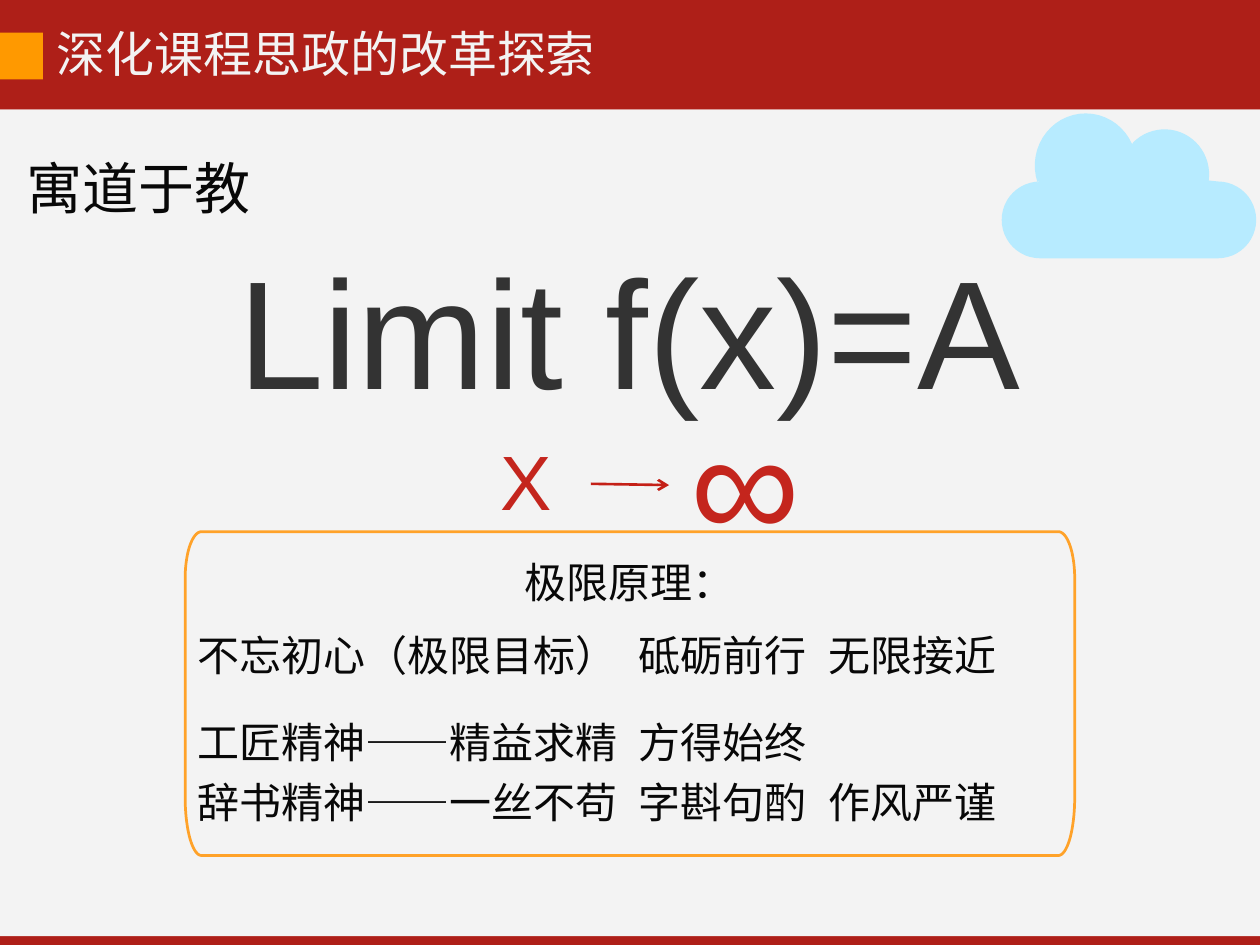
from math import cos, radians, sin

from lxml import etree
from pptx import Presentation, util as u
from pptx.dml.color import RGBColor
from pptx.enum import shapes, text
from pptx.oxml.ns import qn

COLUMNS, ROWS = 100, 75
CELL = u.Inches(0.1)
CJK, LATIN = "Noto Sans CJK SC", "Arial"
NO_STYLE_NO_GRID = "{2D5ABB26-0587-4C30-8999-92F81FD0307C}"
COLORS = {
    "bar": "AE1F18", "page": "F3F3F3", "marker": "FF9900", "ink": "080808",
    "formula": "333333", "limit": "C4251D", "arrow": "C42017",
    "frame": "FFA229", "cloud": "B7EBFF",
}
TABLE_ROWS = [
    ("不忘初心（极限目标）", "砥砺前行", "无限接近"),
    ("工匠精神——精益求精", "方得始终", ""),
    ("辞书精神——一丝不苟", "字斟句酌", "作风严谨"),
]


def grid(*counts):
    """Turn counts of grid cells into lengths."""
    return [u.Emu(round(count * CELL)) for count in counts]


def color(name):
    return RGBColor.from_string(COLORS[name])


def write(frame, words, size, ink="ink", font=CJK, indent=0.1, before=1,
          line=None, align=text.PP_ALIGN.LEFT, top=0.1):
    """Fill a text frame or table cell with one formatted paragraph."""
    frame.margin_left = frame.margin_right = frame.margin_bottom = 0
    frame.margin_top = grid(top)[0]
    paragraph = getattr(frame, "text_frame", frame).paragraphs[0]
    paragraph.alignment = align
    paragraph.space_before = u.Pt(before)
    if line:
        paragraph.line_spacing = u.Pt(line)
    paragraph._p.get_or_add_pPr().set("marL", str(grid(indent)[0]))
    run = paragraph.add_run()
    run.text = words
    run.font.size = u.Pt(size)
    run.font.name = font
    run.font.color.rgb = color(ink)
    east_asian = etree.SubElement(run._r.get_or_add_rPr(), qn("a:ea"))
    east_asian.set("typeface", font)


def add_label(slide, box, words, size, **style):
    frame = slide.shapes.add_textbox(*grid(*box)).text_frame
    frame.word_wrap = True
    write(frame, words, size, **style)


def add_block(slide, box, fill):
    shape = slide.shapes.add_shape(shapes.MSO_SHAPE.RECTANGLE, *grid(*box))
    shape.shadow.inherit = False
    shape.fill.solid()
    shape.fill.fore_color.rgb = color(fill)
    shape.line.fill.background()


def arc(x, y, radius_x, radius_y, start, end, steps=24):
    """Points along an ellipse, clockwise, with angles in degrees."""
    angles = [radians(start + (end - start) * i / steps)
              for i in range(steps + 1)]
    return [(x + radius_x * cos(a), y + radius_y * sin(a)) for a in angles]


def add_outline(slide, points):
    corners = [grid(*point) for point in points]
    builder = slide.shapes.build_freeform(*corners[0])
    builder.add_line_segments(corners[1:], close=True)
    shape = builder.convert_to_shape()
    shape.shadow.inherit = False
    return shape


def page(slide, header, footer):
    add_block(slide, (0, 0, COLUMNS, header), "bar")
    add_block(slide, (0, ROWS - footer, COLUMNS, footer), "bar")
    add_block(slide, (0, header, COLUMNS, ROWS - header - footer), "page")


def heading(slide, box):
    left, top, width, height = box
    add_block(slide, (left, top + 0.8, 3.4, 3.7), "marker")
    add_label(slide, (left + 4.4, top, width - 4.4, height),
              "深化课程思政的改革探索", 28, ink="page")


def formula(slide, box):
    left, top, width, _ = box
    add_label(slide, (left, top, width, 14.9), "Limit f(x)=A", 88,
              ink="formula", font=LATIN)
    add_label(slide, (left + 20.8, top + 15.7, 4.4, 7.6), "X", 44,
              ink="limit", font=LATIN)
    add_label(slide, (left + 35.9, top + 11.9, 9, 14.9), "∞", 88,
              ink="limit", font=LATIN)
    start = grid(left + 28.1, top + 19.8)
    end = grid(left + 34.3, top + 19.9)
    arrow = slide.shapes.add_connector(shapes.MSO_CONNECTOR.STRAIGHT,
                                       *start, *end)
    arrow.line.color.rgb = color("arrow")
    arrow.line.width = u.Pt(1.5)
    etree.SubElement(arrow.line._get_or_add_ln(), qn("a:tailEnd"), type="arrow")
    etree.SubElement(arrow._element.spPr, qn("a:effectLst"))


def principle_frame(slide, box, corner=1.3, upper=3.7, lower=4.6):
    left, top, width, height = box
    west, east = left + corner, left + width - corner
    north, south = top + upper, top + height - lower
    shape = add_outline(slide, [
        *arc(west, north, corner, upper, 180, 270),
        *arc(east, north, corner, upper, 270, 360),
        *arc(east, south, corner, lower, 0, 90),
        *arc(west, south, corner, lower, 90, 180),
    ])
    shape.fill.background()
    shape.line.color.rgb = color("frame")
    shape.line.width = u.Pt(1.56)


def spirit_table(slide, box):
    table = slide.shapes.add_table(3, 3, *grid(*box)).table
    table.first_row = table.horz_banding = False
    table._tbl.tblPr.find(qn("a:tableStyleId")).text = NO_STYLE_NO_GRID
    for column, width in zip(table.columns, grid(34.5, 15, 14.5)):
        column.width = width
    for row, height in zip(table.rows, grid(4.7, 6, 4.7)):
        row.height = height
    column_styles = [
        {"indent": 0.3}, {"indent": 0.8},
        {"indent": 0.5, "align": text.PP_ALIGN.CENTER},
    ]
    row_styles = [
        {"line": 25.4, "before": 0, "top": 0},
        {"before": 6.2, "top": 0.9},
        {"line": 26.4, "before": 6.2, "top": 0.9},
    ]
    for r, row_words in enumerate(TABLE_ROWS):
        for c, words in enumerate(row_words):
            cell = table.cell(r, c)
            cell.fill.solid()
            cell.fill.fore_color.rgb = color("page")
            if words:
                write(cell, words, 24, **column_styles[c], **row_styles[r])


def principle(slide, box):
    left, top, *_ = box
    principle_frame(slide, box)
    add_label(slide, (left + 26.8, top + 1.9, 16.9, 4.3), "极限原理：", 24)
    spirit_table(slide, (left + 0.7, top + 8.5, 64, 15.4))


def cloud(slide, box):
    left, top, width, height = box
    end = 0.265 * height
    base = top + height - end
    shape = add_outline(slide, [
        *arc(left + end, base, end, end, 90, 270),
        *arc(left + 0.33 * width, top + 0.36 * height,
             0.2 * width, 0.36 * height, 161, 336),
        *arc(left + 0.64 * width, top + 0.42 * height,
             0.175 * width, 0.31 * height, 225, 368),
        *arc(left + width - end, base, end, end, 270, 450),
    ])
    shape.fill.solid()
    shape.fill.fore_color.rgb = color("cloud")
    shape.line.fill.background()


def main():
    presentation = Presentation()
    presentation.slide_width = COLUMNS * CELL
    presentation.slide_height = ROWS * CELL
    slide = presentation.slides.add_slide(presentation.slide_layouts[6])
    page(slide, header=8.7, footer=0.7)
    heading(slide, (0, 1.8, 47.4, 4.9))
    add_label(slide, (2, 12.1, 18.1, 5.6), "寓道于教", 32)
    formula(slide, (18.8, 18.6, 62.4, 23.6))
    principle(slide, (14.7, 42.2, 70.6, 25.7))
    cloud(slide, (79.5, 9, 20.2, 11.5))
    presentation.save("out.pptx")


if __name__ == "__main__":
    main()
